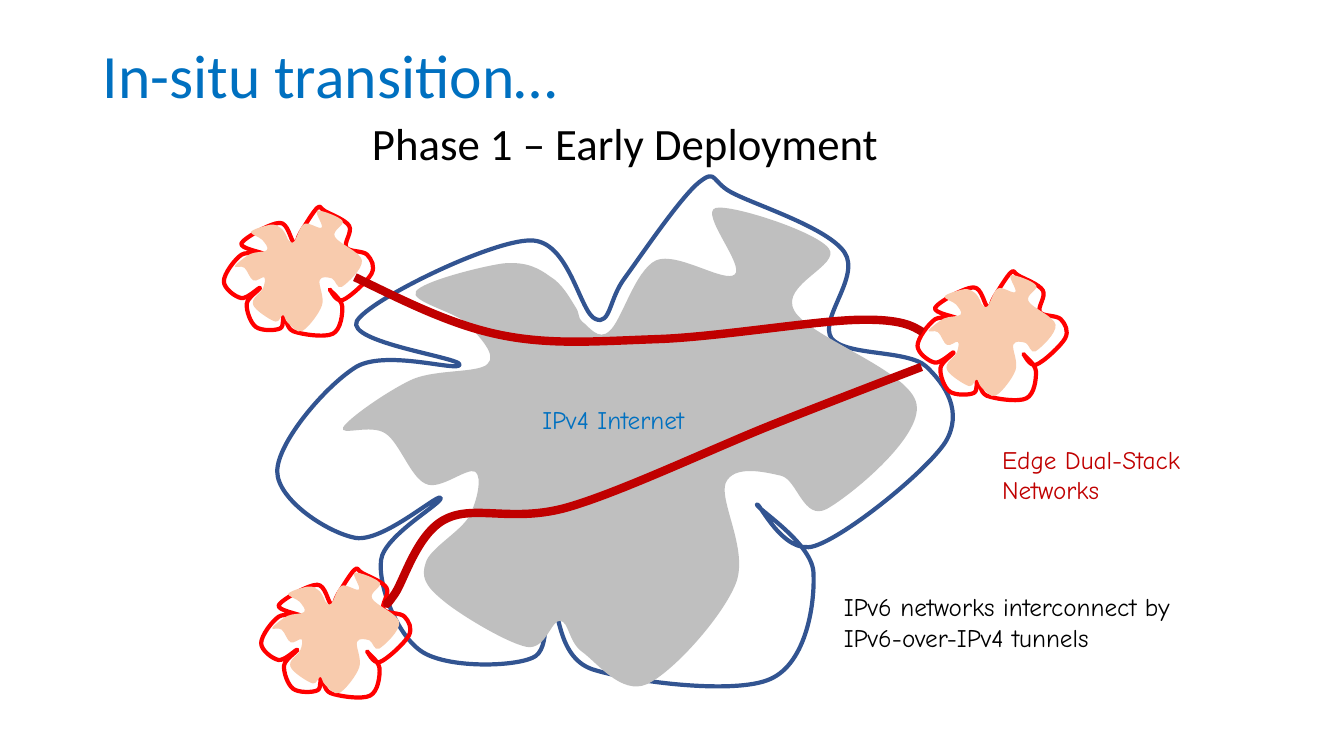
from lxml.etree import SubElement as Sub
from pptx import Presentation
from pptx.dml.color import RGBColor as Rgb
from pptx.oxml.ns import qn
from pptx.util import Inches, Pt

BLUE = Rgb(0x00, 0x70, 0xC0)
NAVY = Rgb(0x32, 0x54, 0x91)
GREY = Rgb(0xBF, 0xBF, 0xBF)
RED = Rgb(0xFF, 0x00, 0x00)
PEACH = Rgb(0xF8, 0xCB, 0xAD)
DARK = Rgb(0xC0, 0x00, 0x00)
BLACK = Rgb(0x00, 0x00, 0x00)

HEAD, NOTE = "Calibri", "Comic Neue"
CELL = Inches(0.1)  # the grid has square cells
STEPS = 12  # samples per piece when measuring a curve

# Curves: a start point, then three points for each cubic piece.
# Only their proportions count, as each curve is fitted to a box.
RIM = [
    (591, 317),
    (575, 311), (565, 238), (526, 239), (487, 239), (366, 298), (354, 319),
    (343, 340), (456, 355), (456, 362), (456, 370), (385, 347), (354, 364),
    (324, 382), (275, 439), (275, 468), (275, 496), (325, 529), (353, 534),
    (380, 538), (433, 491), (437, 494), (442, 498), (381, 531), (378, 556),
    (375, 582), (394, 631), (419, 647), (444, 663), (507, 662), (528, 653),
    (549, 645), (536, 596), (546, 598), (556, 599), (551, 651), (587, 664),
    (623, 676), (728, 690), (764, 674), (801, 658), (809, 596), (807, 567),
    (804, 538), (751, 505), (751, 501), (752, 496), (777, 552), (808, 542),
    (840, 532), (919, 468), (938, 439), (956, 409), (938, 382), (919, 364),
    (900, 347), (839, 354), (825, 336), (812, 317), (854, 275), (838, 251),
    (822, 227), (753, 205), (729, 193), (705, 182), (712, 167), (694, 181),
    (676, 195), (636, 254), (620, 276), (604, 297), (606, 323), (591, 317),
]
CORE = [
    (577, 319),
    (572, 315), (575, 311), (570, 304), (565, 296), (557, 281), (545, 274),
    (534, 266), (522, 259), (499, 261), (477, 264), (418, 279), (412, 289),
    (406, 299), (451, 309), (463, 321), (475, 334), (493, 352), (483, 361),
    (474, 370), (433, 366), (409, 376), (385, 387), (345, 415), (340, 424),
    (336, 433), (368, 420), (382, 430), (396, 439), (407, 474), (422, 480),
    (436, 487), (463, 463), (471, 468), (478, 473), (473, 497), (465, 512),
    (457, 527), (426, 544), (422, 558), (417, 572), (421, 581), (438, 595),
    (454, 609), (502, 638), (522, 642), (541, 645), (546, 615), (555, 616),
    (564, 617), (563, 637), (577, 647), (592, 658), (616, 690), (641, 679),
    (667, 667), (716, 612), (729, 579), (742, 546), (712, 497), (719, 479),
    (727, 461), (757, 468), (774, 472), (790, 476), (796, 517), (819, 505),
    (841, 493), (914, 434), (908, 401), (903, 368), (801, 334), (787, 308),
    (772, 282), (834, 263), (821, 246), (808, 229), (724, 202), (709, 206),
    (693, 211), (738, 263), (728, 272), (718, 281), (671, 249), (650, 258),
    (629, 268), (616, 318), (604, 328), (593, 339), (583, 323), (577, 319),
]
UPPER = [
    (352, 275),
    (400, 298), (447, 322), (497, 332), (547, 342), (593, 338), (652, 336),
    (711, 334), (807, 318), (851, 317), (894, 316), (905, 323), (915, 329),
]
LOWER = [
    (385, 596),
    (383, 599), (381, 603), (391, 589), (400, 576), (413, 529), (441, 515),
    (470, 500), (508, 519), (563, 503), (618, 487), (712, 442), (771, 419),
    (829, 396), (913, 364), (913, 364),
]


def fit(vals, size):
    """Scale one axis so that the drawn curve spans the given length."""
    seen = []
    for i in range(0, len(vals) - 1, 3):
        a, b, c, d = vals[i:i + 4]
        for n in range(STEPS + 1):
            t = n / STEPS
            u = 1 - t
            seen.append(a * u ** 3 + 3 * b * u * u * t
                        + 3 * c * u * t * t + d * t ** 3)
    low, high = min(seen), max(seen)
    return [round((v - low) / (high - low) * size) for v in vals]


def trace(shape, pts):
    """Replace the straight outline of a freeform by cubic pieces."""
    route = shape._element.find(".//" + qn("a:path"))
    for old in list(route):
        route.remove(old)

    def add(tag, spots):
        node = Sub(route, qn(tag))
        for x, y in spots:
            Sub(node, qn("a:pt"), x=str(x), y=str(y))

    add("a:moveTo", pts[:1])
    for i in range(1, len(pts), 3):
        add("a:cubicBezTo", pts[i:i + 3])
    if pts[0] == pts[-1]:
        add("a:close", [])


class Sketch:
    """Draws on one slide; boxes are column, row, columns, rows."""

    def __init__(self, deck):
        self.slide = deck.slides.add_slide(deck.slide_layouts[6])

    def text(self, box, lines, size, color, font=NOTE, lead=None):
        area = self.slide.shapes.add_textbox(*(round(v * CELL) for v in box))
        frame = area.text_frame
        frame.word_wrap = True
        frame.text = lines
        for par in frame.paragraphs:
            if lead:
                par.line_spacing = lead
            for run in par.runs:
                run.font.name = font
                run.font.size = Pt(size)
                run.font.color.rgb = color

    def curve(self, box, pts, fill=None, line=None, width=3):
        left, top, wide, high = (round(v * CELL) for v in box)
        pen = self.slide.shapes.build_freeform(left, top)
        pen.add_line_segments([(left + wide, top + high)], close=False)
        shape = pen.convert_to_shape()
        xs, ys = zip(*pts)
        trace(shape, list(zip(fit(xs, wide), fit(ys, high))))
        shape.shadow.inherit = False
        if fill:
            shape.fill.solid()
            shape.fill.fore_color.rgb = fill
        else:
            shape.fill.background()
        if line:
            shape.line.color.rgb = line
            shape.line.width = Pt(width)
        else:
            shape.line.fill.background()

    def edge(self, left, top):
        """Draw a small dual-stack network."""
        self.curve((left, top, 14.8, 12.8), RIM, line=RED)
        self.curve((left + 1.1, top + 0.4, 12.6, 12), CORE, fill=PEACH)


def main():
    deck = Presentation()
    deck.slide_width, deck.slide_height = Inches(13.33), Inches(7.5)
    page = Sketch(deck)

    page.text((9.2, 4, 102.3, 14.3), "In-situ transition…", 44, BLUE,
              HEAD, lead=0.9)
    page.curve((27.5, 17.5, 67, 50.6), RIM, line=NAVY)
    page.curve((34, 20.6, 56.9, 47.5), CORE, fill=GREY)
    page.text((52.8, 39.6, 19.9, 4), "IPv4 Internet", 18, BLUE)
    page.text((35.9, 11, 72.2, 6.4), "Phase 1 – Early Deployment", 32,
              BLACK, HEAD)
    for spot in ((22.2, 20.5), (91, 26.9), (25.9, 56.4)):
        page.edge(*spot)
    page.text((98.4, 43.6, 27.7, 7.1), "Edge Dual-Stack Networks", 18, DARK)
    page.curve((35.2, 27.5, 56.3, 6.4), UPPER, line=DARK, width=6)
    page.curve((38.4, 36.4, 53, 23.5), LOWER, line=DARK, width=6)
    page.text((82.7, 58.2, 42.2, 7.1),
              "IPv6 networks interconnect by\nIPv6-over-IPv4 tunnels",
              18, BLACK)
    deck.save("out.pptx")


if __name__ == "__main__":
    main()
